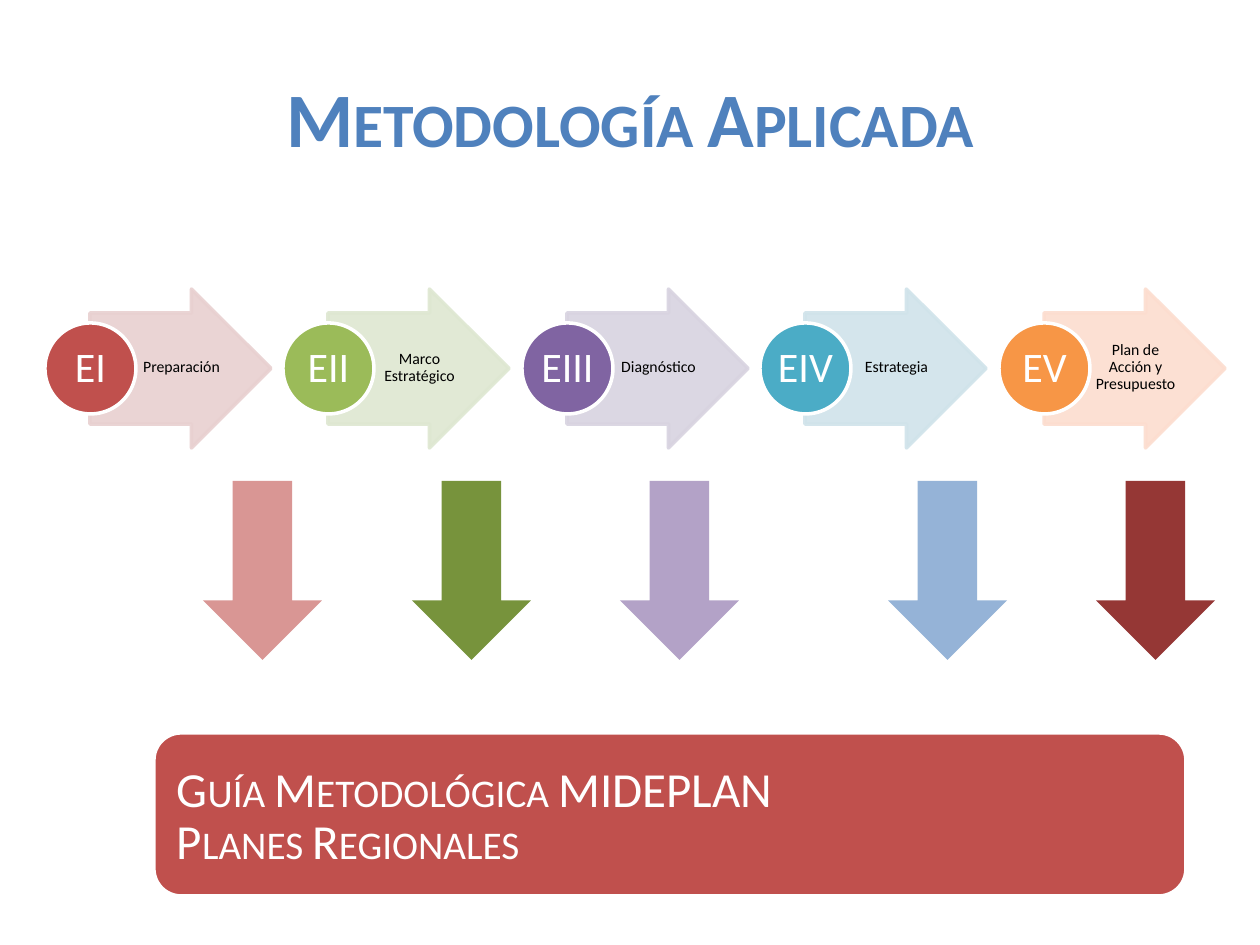
from pptx import Presentation
from pptx.dml.color import RGBColor
from pptx.enum.shapes import MSO_SHAPE
from pptx.enum.text import MSO_ANCHOR, PP_ALIGN
from pptx.oxml.ns import qn
from pptx.util import Emu, Pt
from lxml import etree

RIGHT_ARROW, DOWN_ARROW = MSO_SHAPE.RIGHT_ARROW, MSO_SHAPE.DOWN_ARROW
OVAL, ROUNDED = MSO_SHAPE.OVAL, MSO_SHAPE.ROUNDED_RECTANGLE
LEFT, CENTER, MIDDLE = PP_ALIGN.LEFT, PP_ALIGN.CENTER, MSO_ANCHOR.MIDDLE
WHITE, BLACK, BLUE, RED = "FFFFFF", "000000", "4F81BD", "C0504D"
TITLE_ONLY = 5

STAGES = [
    ("EI", "Preparación", RED, "E8D0D0"),
    ("EII", "Marco Estratégico", "9BBB59", "DEE7D1"),
    ("EIII", "Diagnóstico", "8064A2", "D8D3E0"),
    ("EIV", "Estrategia", "4BACC6", "D0E3EA"),
    ("EV", "Plan de Acción y Presupuesto", "F79646", "FCDDCF"),
]
DOWN_ARROWS = [(203, "D99694"), (412, "77933C"), (620, "B3A2C7"),
               (888, "95B3D7"), (1096, "953735")]


def px(n):
    """Turn pixels into EMU."""
    return Emu(round(n * 914400 / 126))


def rgb(color):
    """Turn a hex string into a colour."""
    return RGBColor.from_string(color)


class Deck:
    """Hold the style and the current slide."""

    font = "Calibri"
    line_width = Pt(2)

    def __init__(self):
        """Start a presentation with one slide."""
        self.prs = Presentation()
        self.prs.slide_width, self.prs.slide_height = px(1260), px(945)
        self.s = self.prs.slides.add_slide(self.prs.slide_layouts[TITLE_ONLY])

    def set_text(self, sp, text, size, color, align=CENTER, inset=(0, 0, 0, 0),
                 bold=False, small=False, spacing=0.9, wrap=True):
        """Put formatted text into a shape."""
        tf = sp.text_frame
        tf.text = text
        tf.word_wrap = wrap
        tf.vertical_anchor = MIDDLE
        tf.margin_left, tf.margin_top, tf.margin_right, tf.margin_bottom = map(px, inset)
        for p in tf.paragraphs:
            p.alignment = align
            p.line_spacing = spacing
            for r in p.runs:
                r.font.name, r.font.size, r.font.bold = self.font, Pt(size), bold
                r.font.color.rgb = rgb(color)
                if small:
                    r.font._element.set("cap", "small")

    def title(self, box, text):
        """Fill and place the title placeholder."""
        sp = self.s.shapes.title
        sp.left, sp.top, sp.width, sp.height = map(px, box)
        self.set_text(sp, text, 44, BLUE, inset=(13, 6, 13, 6), bold=True,
                      small=True, spacing=1.0)

    def shape(self, kind, box, fill, line=None, opacity=100):
        """Add a filled preset shape."""
        sp = self.s.shapes.add_shape(kind, *map(px, box))
        sp.shadow.inherit = False
        sp.fill.solid()
        sp.fill.fore_color.rgb = rgb(fill)
        if line:
            sp.line.color.rgb = rgb(line)
            sp.line.width = self.line_width
        else:
            sp.line.fill.background()
        if opacity < 100:
            for clr in sp._element.spPr.iter(qn("a:srgbClr")):
                etree.SubElement(clr, qn("a:alpha"), val=str(opacity * 1000))
        return sp

    def label(self, box, text, size, color, inset):
        """Add a text box."""
        sp = self.s.shapes.add_textbox(*map(px, box))
        self.set_text(sp, text, size, color, inset=inset)

    def stage(self, x, code, name, color, tint):
        """Add a stage: tinted arrow, name and coded circle."""
        arrow = self.shape(RIGHT_ARROW, (x + 45, 289, 181, 159), tint, tint, 90)
        arrow.adjustments[0], arrow.adjustments[1] = 0.7, 0.5
        self.label((x + 91, 312, 88, 111), name, 9, BLACK, (4, 1, 1, 1))
        circle = self.shape(OVAL, (x, 323, 91, 91), color, WHITE)
        self.set_text(circle, code, 24, WHITE, wrap=False)


def main():
    """Build the slide."""
    deck = Deck()
    deck.title((63, 38, 1134, 158), "Metodología Aplicada")
    for i, stage in enumerate(STAGES):
        deck.stage(45 + 477 * i // 2, *stage)
    for x, color in DOWN_ARROWS:
        deck.shape(DOWN_ARROW, (x, 481, 119, 179), color)
    guide = deck.shape(ROUNDED, (154, 733, 1032, 163), RED, WHITE)
    deck.set_text(guide, "Guía Metodológica MIDEPLAN\nPlanes Regionales", 28, WHITE,
                  align=LEFT, inset=(15, 15, 15, 15), small=True)
    guide.text_frame.paragraphs[0].line_spacing = 1.0
    deck.prs.save("out.pptx")


if __name__ == "__main__":
    main()
